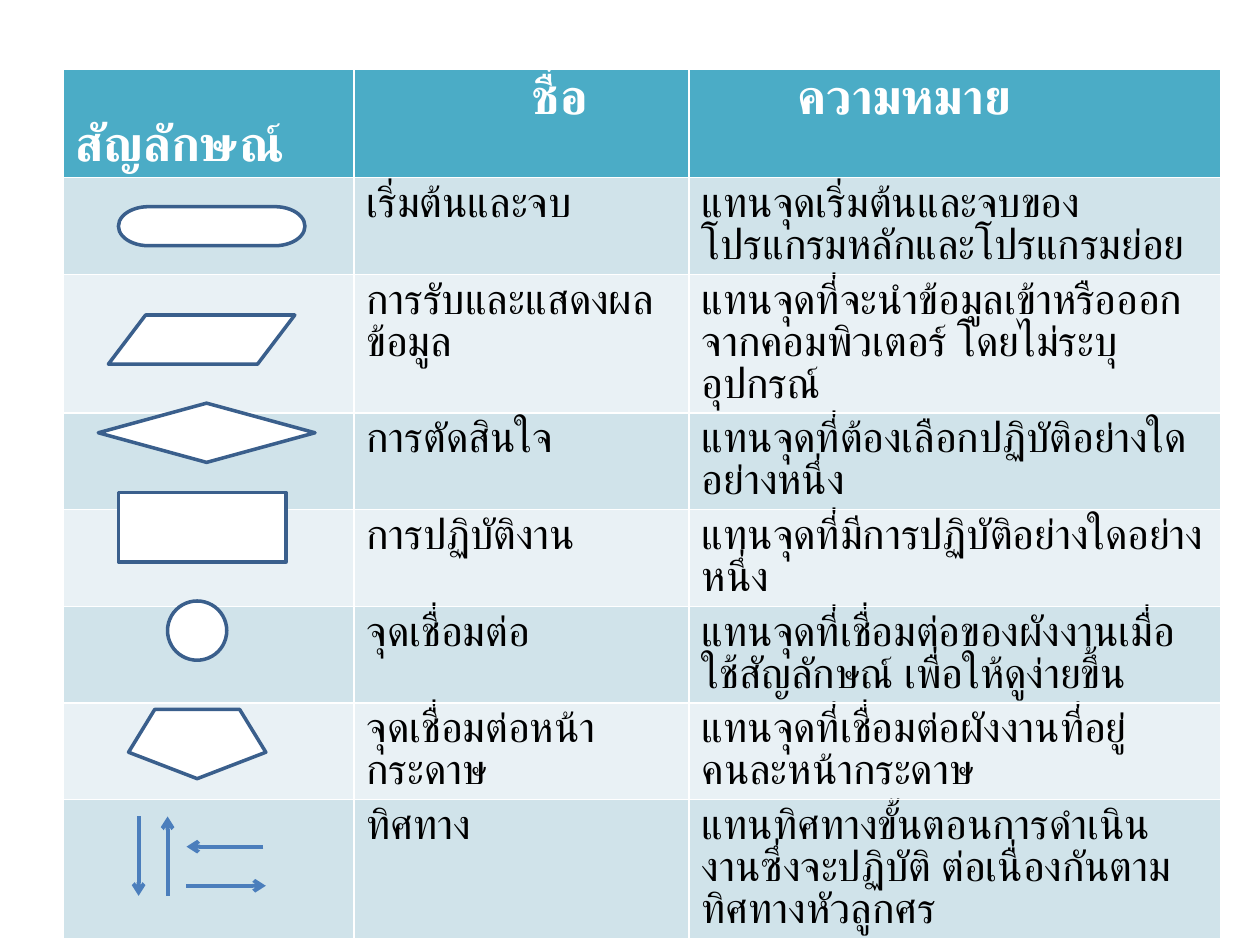
from typing import NamedTuple

from lxml import etree
from pptx import Presentation
from pptx.dml.color import RGBColor
from pptx.enum.shapes import MSO_CONNECTOR, MSO_SHAPE
from pptx.enum.text import MSO_ANCHOR
from pptx.oxml.ns import qn
from pptx.util import Inches, Pt

LINE = MSO_CONNECTOR.STRAIGHT
TOP, BOTTOM = MSO_ANCHOR.TOP, MSO_ANCHOR.BOTTOM
TERM = MSO_SHAPE.FLOWCHART_TERMINATOR
DATA = MSO_SHAPE.FLOWCHART_DATA
CHOICE = MSO_SHAPE.FLOWCHART_DECISION
TASK = MSO_SHAPE.FLOWCHART_PROCESS
ROUND = MSO_SHAPE.OVAL
PENTA = MSO_SHAPE.REGULAR_PENTAGON

COLORS = {
    "head": "4BACC6", "odd": "D0E3EA", "even": "E9F1F5",
    "white": "FFFFFF", "black": "000000",
    "edge": "3A5F8C", "arrow": "4B7EBC",
}
HEAD = {"name": "Calibri", "size": Pt(28), "bold": True}
BODY = {"name": "Calibri", "size": Pt(24), "bold": False}


class Title(NamedTuple):
    text: str
    left: float
    anchor: MSO_ANCHOR


class Symbol(NamedTuple):
    kind: MSO_SHAPE
    x: float
    y: float
    w: float
    h: float
    turn: int = 0


class Arrow(NamedTuple):
    x1: float
    y1: float
    x2: float
    y2: float


WIDTHS = [2.31, 2.66, 4.22]
HEAD_H, ROW_H = 0.86, 0.72
TITLES = [
    Title("สัญลักษณ์", 0.1, BOTTOM),
    Title("ชื่อ", 1.41, TOP),
    Title("ความหมาย", 0.86, TOP),
]
ROWS = [
    ("เริ่มต้นและจบ", "แทนจุดเริ่มต้นและจบของโปรแกรมหลักและโปรแกรมย่อย"),
    ("การรับและแสดงผลข้อมูล",
     "แทนจุดที่จะนำข้อมูลเข้าหรือออกจากคอมพิวเตอร์ โดยไม่ระบุอุปกรณ์"),
    ("การตัดสินใจ", "แทนจุดที่ต้องเลือกปฏิบัติอย่างใดอย่างหนึ่ง"),
    ("การปฏิบัติงาน", "แทนจุดที่มีการปฏิบัติอย่างใดอย่างหนึ่ง"),
    ("จุดเชื่อมต่อ",
     "แทนจุดที่เชื่อมต่อของผังงานเมื่อใช้สัญลักษณ์ เพื่อให้ดูง่ายขึ้น"),
    ("จุดเชื่อมต่อหน้ากระดาษ", "แทนจุดที่เชื่อมต่อผังงานที่อยู่คนละหน้ากระดาษ"),
    ("ทิศทาง",
     "แทนทิศทางขั้นตอนการดำเนินงานซึ่งจะปฏิบัติ ต่อเนื่องกันตามทิศทางหัวลูกศร"),
]
SYMBOLS = [
    Symbol(TERM, 0.94, 1.64, 1.48, 0.31),
    Symbol(DATA, 0.86, 2.5, 1.48, 0.39),
    Symbol(CHOICE, 0.78, 3.2, 1.72, 0.47),
    Symbol(TASK, 0.94, 3.91, 1.33, 0.55),
    Symbol(ROUND, 1.33, 4.77, 0.47, 0.47),
    Symbol(PENTA, 1.02, 5.63, 1.09, 0.55, 180),
]
ARROWS = [
    Arrow(1.1, 6.48, 1.1, 7.11),
    Arrow(1.48, 7.03, 2.11, 7.03),
    Arrow(2.09, 6.72, 1.48, 6.72),
    Arrow(1.33, 7.11, 1.33, 6.48),
]


def color(key: str) -> RGBColor:
    return RGBColor.from_string(COLORS[key])


def fill_cell(cell, fill: str, text: str, ink: str, style: dict) -> None:
    cell.fill.solid()
    cell.fill.fore_color.rgb = color(fill)
    if not text:
        return
    run = cell.text_frame.paragraphs[0].add_run()
    run.text = text
    run.font.color.rgb = color(ink)
    for name, value in style.items():
        setattr(run.font, name, value)


def draw_table(slide) -> None:
    high = HEAD_H + ROW_H * len(ROWS)
    frame = slide.shapes.add_table(
        len(ROWS) + 1, len(WIDTHS), Inches(0.5), Inches(0.55),
        Inches(sum(WIDTHS)), Inches(high))
    table = frame.table
    for col, width in zip(table.columns, WIDTHS):
        col.width = Inches(width)
    for i, row in enumerate(table.rows):
        row.height = Inches(ROW_H if i else HEAD_H)

    # Header
    for i, title in enumerate(TITLES):
        cell = table.cell(0, i)
        fill_cell(cell, "head", title.text, "white", HEAD)
        cell.margin_left = Inches(title.left)
        cell.vertical_anchor = title.anchor

    # Body: the first column stays free for the symbols
    for i, texts in enumerate(ROWS, 1):
        band = "odd" if i % 2 else "even"
        for j, text in enumerate(("", *texts)):
            fill_cell(table.cell(i, j), band, text, "black", BODY)


def draw_symbol(slide, sym: Symbol) -> None:
    shape = slide.shapes.add_shape(
        sym.kind, Inches(sym.x), Inches(sym.y), Inches(sym.w), Inches(sym.h))
    shape.shadow.inherit = False
    shape.rotation = sym.turn
    shape.fill.solid()
    shape.fill.fore_color.rgb = color("white")
    shape.line.color.rgb = color("edge")
    shape.line.width = Pt(2)


def draw_arrow(slide, arrow: Arrow) -> None:
    line = slide.shapes.add_connector(LINE, *(Inches(v) for v in arrow))
    line.line.color.rgb = color("arrow")
    line.line.width = Pt(2.25)
    props = line._element.spPr
    etree.SubElement(props.find(qn("a:ln")), qn("a:tailEnd"), type="arrow")
    etree.SubElement(props, qn("a:effectLst"))


def main() -> None:
    deck = Presentation()
    deck.slide_width, deck.slide_height = Inches(10), Inches(7.5)
    slide = deck.slides.add_slide(deck.slide_layouts[6])
    draw_table(slide)
    for sym in SYMBOLS:
        draw_symbol(slide, sym)
    for arrow in ARROWS:
        draw_arrow(slide, arrow)
    deck.save("out.pptx")


if __name__ == "__main__":
    main()
